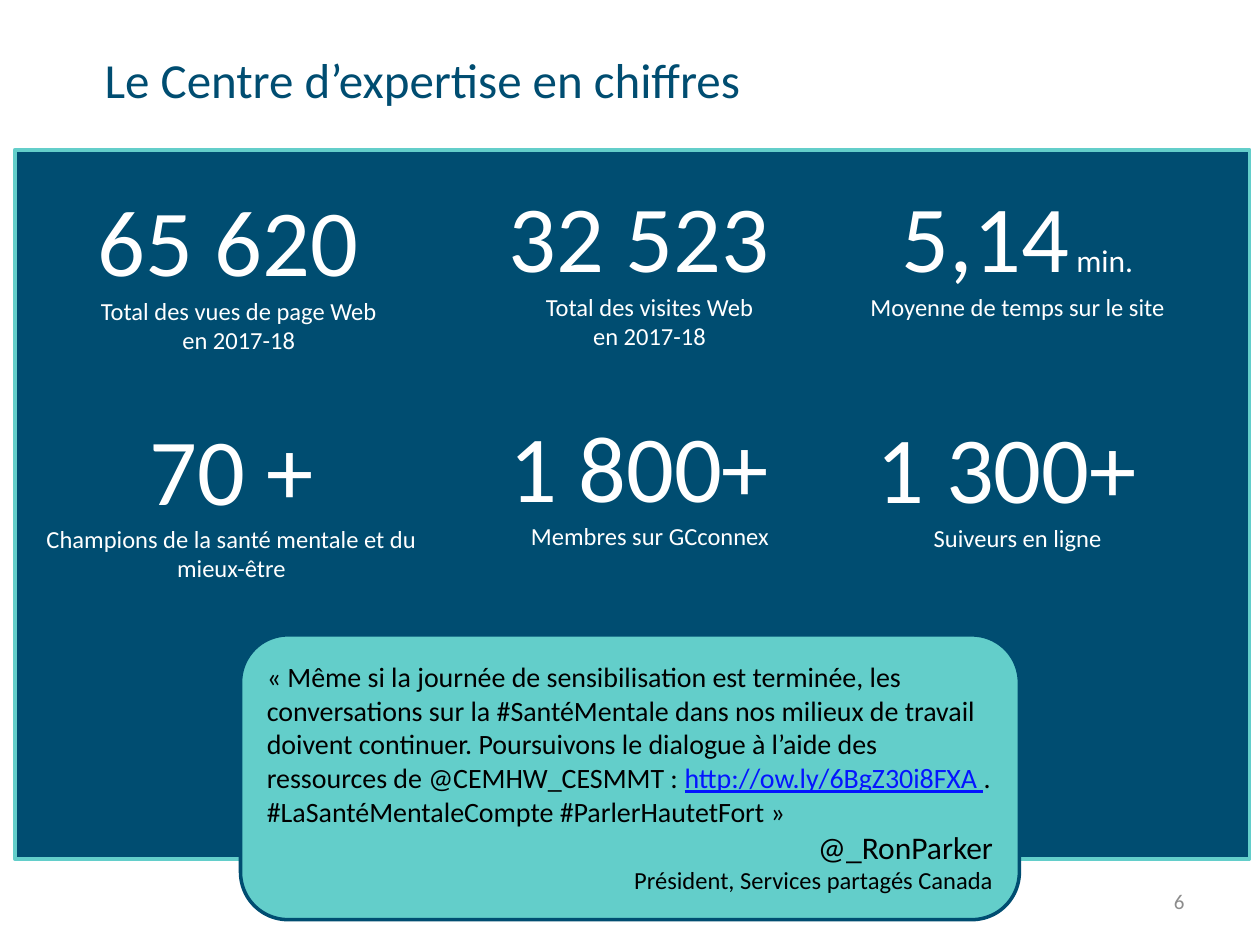
from lxml import etree
from pptx import Presentation
from pptx import util as u
from pptx.dml.color import RGBColor
from pptx.enum import shapes, text
from pptx.oxml import ns

# Content
TITLE = "Le Centre d’expertise en chiffres"
PAGE = "6"
# left, top, width, height (cm), figure, unit, label
STATS = [
    (0.66, 3.61, 8.31, 3.61, "65 620 ", "", "Total des vues de page Web\nen 2017-18"),
    (8.94, 3.53, 8.31, 3.61, "32 523 ", "", "Total des visites Web\nen 2017-18"),
    (16.36, 3.23, 8.31, 3.61, "5,14", " min.", "Moyenne de temps sur le site"),
    (0.51, 8.26, 8.31, 3.51, "70 +", "", "Champions de la santé mentale et du mieux-être"),
    (9.27, 7.9, 7.67, 3.51, "1 800+ ", "", "Membres sur GCconnex"),
    (16.36, 7.85, 8.31, 3.68, "1 300+ ", "", "Suiveurs en ligne"),
]
# text, style
QUOTE = [
    ("« Même si la journée de sensibilisation est terminée, les conversations sur la ", ""),
    ("#", "shadow"),
    ("SantéMentale dans nos milieux de travail doivent continuer. Poursuivons le dialogue "
     "à l’aide des ressources de @CEMHW_CESMMT : ", ""),
    ("http://ow.ly/6BgZ30i8FXA ", "link"),
    (". ", ""),
    ("#", "shadow"),
    ("LaSantéMentaleCompte ", ""),
    ("#", "shadow"),
    ("ParlerHautetFort »", ""),
]
AUTHOR = "@_RonParker"
ROLE = "Président, Services partagés Canada"

FONT = "Calibri"
NAVY, TEAL, WHITE, BLACK = "004D71", "63CECA", "FFFFFF", "000000"
BLUE, GREY = "0415FF", "8C8C8C"
CENTER, RIGHT, LEFT = text.PP_ALIGN.CENTER, text.PP_ALIGN.RIGHT, text.PP_ALIGN.LEFT


def rgb(value):
    return RGBColor.from_string(value)


def style(r, size, color):
    r.font.name, r.font.size = FONT, u.Pt(size)
    r.font.color.rgb = rgb(color)


def add_run(p, content, size, color):
    r = p.add_run()
    r.text = content
    style(r, size, color)
    return r


def add_text_shadow(r):
    effects = etree.SubElement(r.font._element, ns.qn("a:effectLst"))
    r.font._element.find(ns.qn("a:solidFill")).addnext(effects)
    shadow = etree.SubElement(effects, ns.qn("a:outerShdw"),
                              blurRad="38100", dist="38100", dir="2700000")
    etree.SubElement(shadow, ns.qn("a:srgbClr"), val=BLACK)


def add_box(s, kind, box, fill, line):
    sp = s.shapes.add_shape(kind, *(u.Cm(v) for v in box))
    sp.shadow.inherit = False
    sp.fill.solid()
    sp.fill.fore_color.rgb = rgb(fill)
    sp.line.color.rgb = rgb(line)
    sp.line.width = u.Pt(2)
    sp.text_frame.word_wrap = True
    sp.text_frame.vertical_anchor = text.MSO_ANCHOR.MIDDLE
    return sp


def add_stat(s, box, figure, unit, label):
    tf = add_box(s, shapes.MSO_SHAPE.RECTANGLE, box, NAVY, NAVY).text_frame
    p = tf.paragraphs[0]
    add_run(p, figure, 54, WHITE)
    if unit:
        add_run(p, unit, 18, WHITE)
    caption = tf.add_paragraph()
    caption.text = label
    for r in caption.runs:
        style(r, 14, WHITE)
    p.alignment = caption.alignment = CENTER


def add_quote(s):
    box = (4.85, 12.8, 15.7, 5.74)
    tf = add_box(s, shapes.MSO_SHAPE.ROUNDED_RECTANGLE, box, TEAL, NAVY).text_frame
    p = tf.paragraphs[0]
    p.alignment = LEFT
    for content, look in QUOTE:
        r = add_run(p, content, 16, BLUE if look == "link" else BLACK)
        if look == "link":
            r.font.underline = True
        elif look == "shadow":
            add_text_shadow(r)
    p = tf.add_paragraph()
    p.alignment = RIGHT
    add_run(p, AUTHOR, 18, BLACK)
    p.add_line_break()
    add_run(p, ROLE, 14, BLACK)


def main():
    prs = Presentation()
    prs.slide_width, prs.slide_height = u.Cm(25.4), u.Cm(19.05)
    s = prs.slides.add_slide(prs.slide_layouts[5])

    # Title
    title = s.shapes.title
    title.left, title.top, title.width, title.height = (
        u.Cm(v) for v in (2.11, 0.38, 15.09, 2.44))
    tf = title.text_frame
    tf.text = TITLE
    tf.word_wrap = True
    tf.vertical_anchor = text.MSO_ANCHOR.MIDDLE
    tf.margin_left = tf.margin_right = tf.margin_top = tf.margin_bottom = 0
    tf.paragraphs[0].alignment = LEFT
    style(tf.paragraphs[0].runs[0], 28, NAVY)

    # Panel with the key figures
    add_box(s, shapes.MSO_SHAPE.RECTANGLE, (0.3, 3.02, 24.89, 14.3), NAVY, TEAL)
    for *box, figure, unit, label in STATS:
        add_stat(s, box, figure, unit, label)

    add_quote(s)

    # Page number
    number = s.shapes.add_textbox(u.Cm(18.21), u.Cm(17.65), u.Cm(5.92), u.Cm(1.02))
    tf = number.text_frame
    tf.text = PAGE
    tf.word_wrap = True
    tf.vertical_anchor = text.MSO_ANCHOR.MIDDLE
    tf.paragraphs[0].alignment = RIGHT
    style(tf.paragraphs[0].runs[0], 12, GREY)

    prs.save("out.pptx")


if __name__ == "__main__":
    main()
